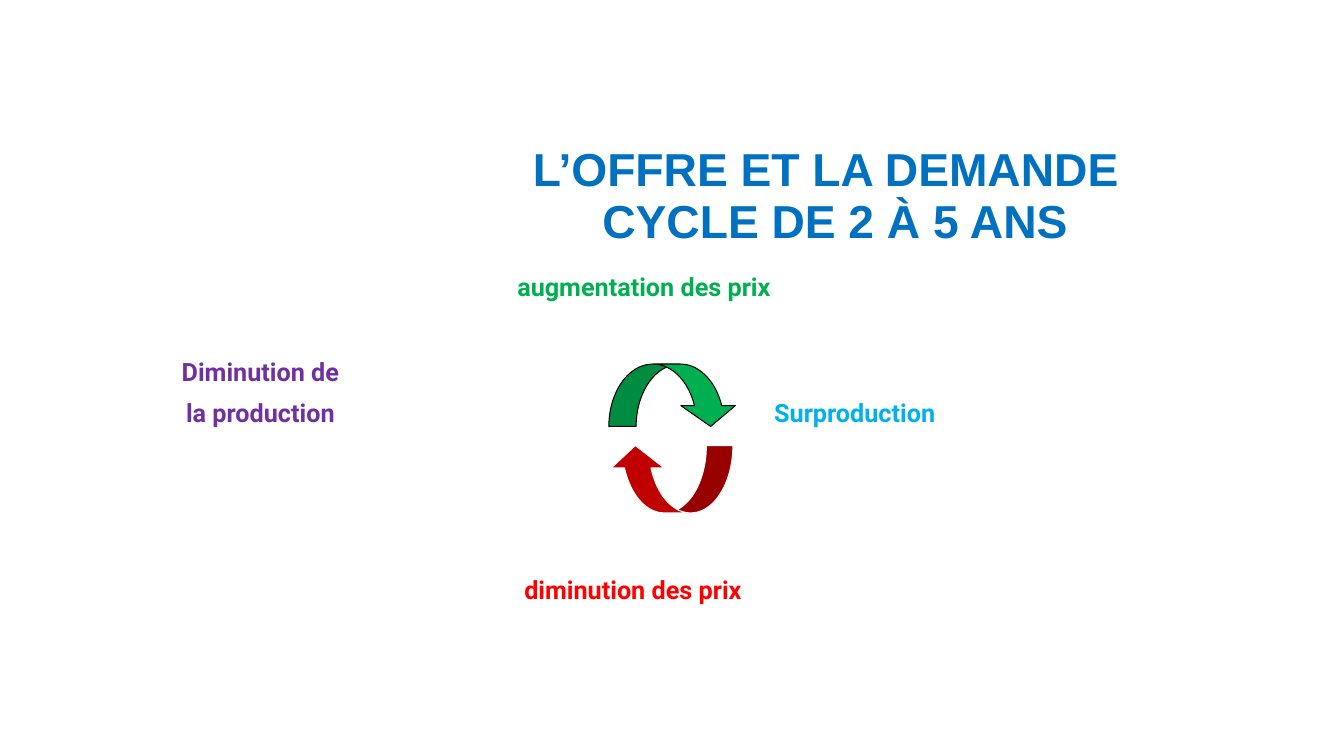
from pptx import Presentation
from pptx.dml import color
from pptx.enum import shapes, text
from pptx.util import Pt


def paint(code):
    return color.RGBColor.from_string(code)


def write(frame, words, font="Roboto", size=18, hue="000000", align="LEFT",
          anchor="TOP", lead=1, gap=0, pad=0, shifts=(0, 0)):
    frame.word_wrap = True
    frame.auto_size = text.MSO_AUTO_SIZE.NONE
    frame.vertical_anchor = text.MSO_ANCHOR[anchor]
    frame.margin_left = frame.margin_right = Pt(pad)
    frame.margin_top = frame.margin_bottom = Pt(0)
    frame.text = words
    for i, par in enumerate(frame.paragraphs):
        par.alignment = text.PP_ALIGN[align]
        par.line_spacing = lead
        par.space_before = Pt(gap if i else 0)
        par._p.get_or_add_pPr().set("marL", str(Pt(shifts[i])))
        face = par.runs[0].font
        face.name = font
        face.size = Pt(size)
        face.bold = True
        face.color.rgb = paint(hue)


deck = Presentation()
deck.slide_width, deck.slide_height = Pt(960), Pt(540)
slide = deck.slides.add_slide(deck.slide_layouts[5])

title = slide.shapes.title
title.left, title.top, title.width, title.height = Pt(343.5), Pt(72.7), Pt(488), Pt(135.4)
write(title.text_frame, "L’OFFRE ET LA DEMANDE\nCYCLE DE 2 À 5 ANS", font="Arial",
      size=33, hue="0070C0", align="CENTER", anchor="MIDDLE", lead=0.94,
      pad=7.2, shifts=(5, 18))

labels = [
    ("Diminution de\nla production", 116, 257, 140, 50, "7030A0", "CENTER", 0.9),
    ("Surproduction", 553, 286, 140, 22, "00B0F0", "LEFT", 0.9),
    ("diminution des prix", 374.5, 410, 210, 24, "FF0000", "LEFT", 1),
    ("augmentation des prix", 369.5, 194, 240, 24, "00B050", "LEFT", 1),
]
for words, x, y, wide, high, hue, align, lead in labels:
    box = slide.shapes.add_textbox(Pt(x), Pt(y), Pt(wide), Pt(high))
    write(box.text_frame, words, hue=hue, align=align, lead=lead, gap=10)

arrows = [
    (260, 92.2, 44.6, 0, "00B050", "000000", (0.437, 0.874, 0.333)),
    (318.2, 88.6, 48.2, 180, "C00000", "FFFFFF", (0.393, 0.785, 0.333)),
]
for y, wide, high, turn, fill, edge, bends in arrows:
    arrow = slide.shapes.add_shape(shapes.MSO_SHAPE.CURVED_DOWN_ARROW,
                                   Pt(434.9), Pt(y), Pt(wide), Pt(high))
    for i, bend in enumerate(bends):
        arrow.adjustments[i] = bend
    arrow.rotation = turn
    arrow.shadow.inherit = False
    arrow.fill.solid()
    arrow.fill.fore_color.rgb = paint(fill)
    arrow.line.color.rgb = paint(edge)
    arrow.line.width = Pt(0.75)

deck.save("out.pptx")
